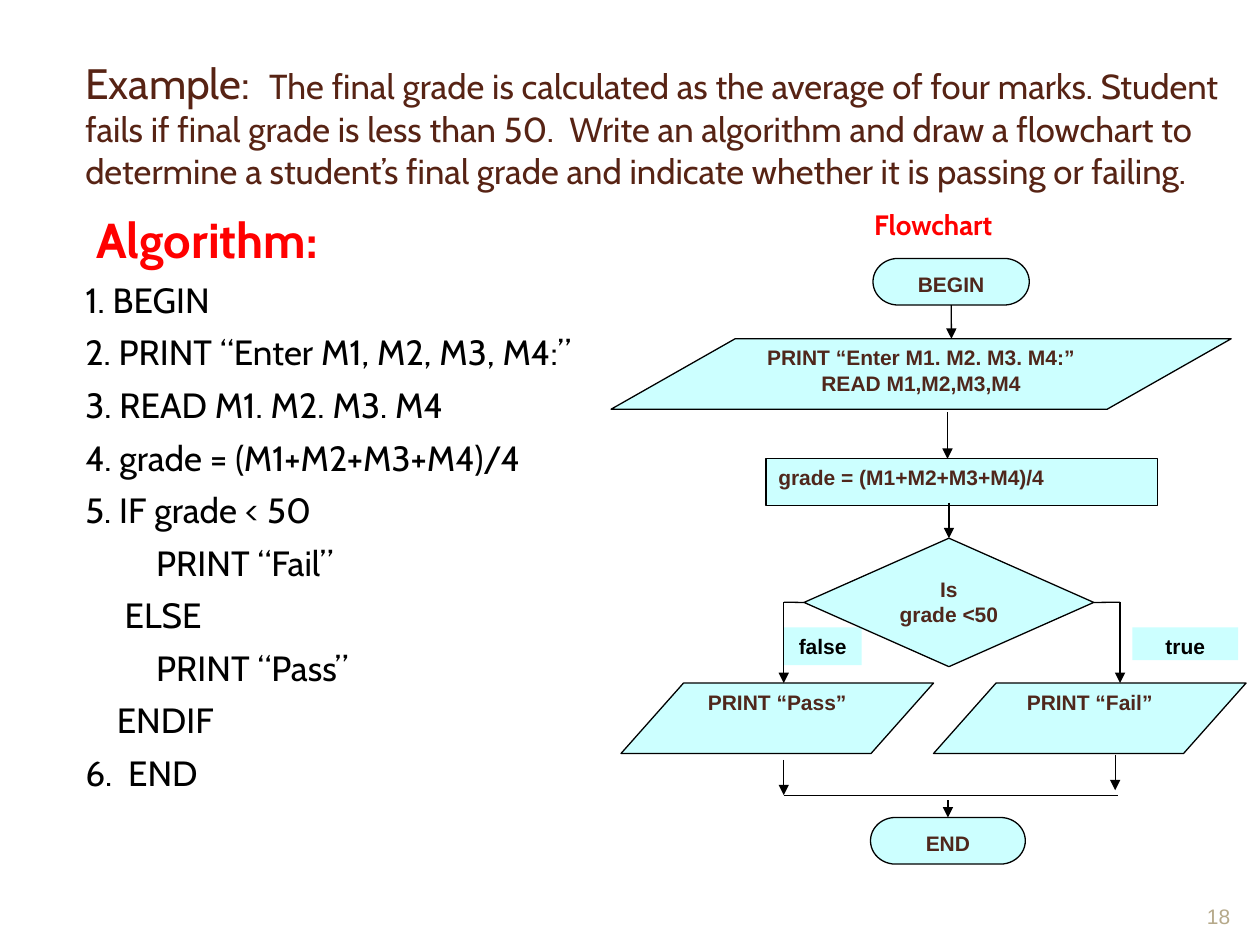
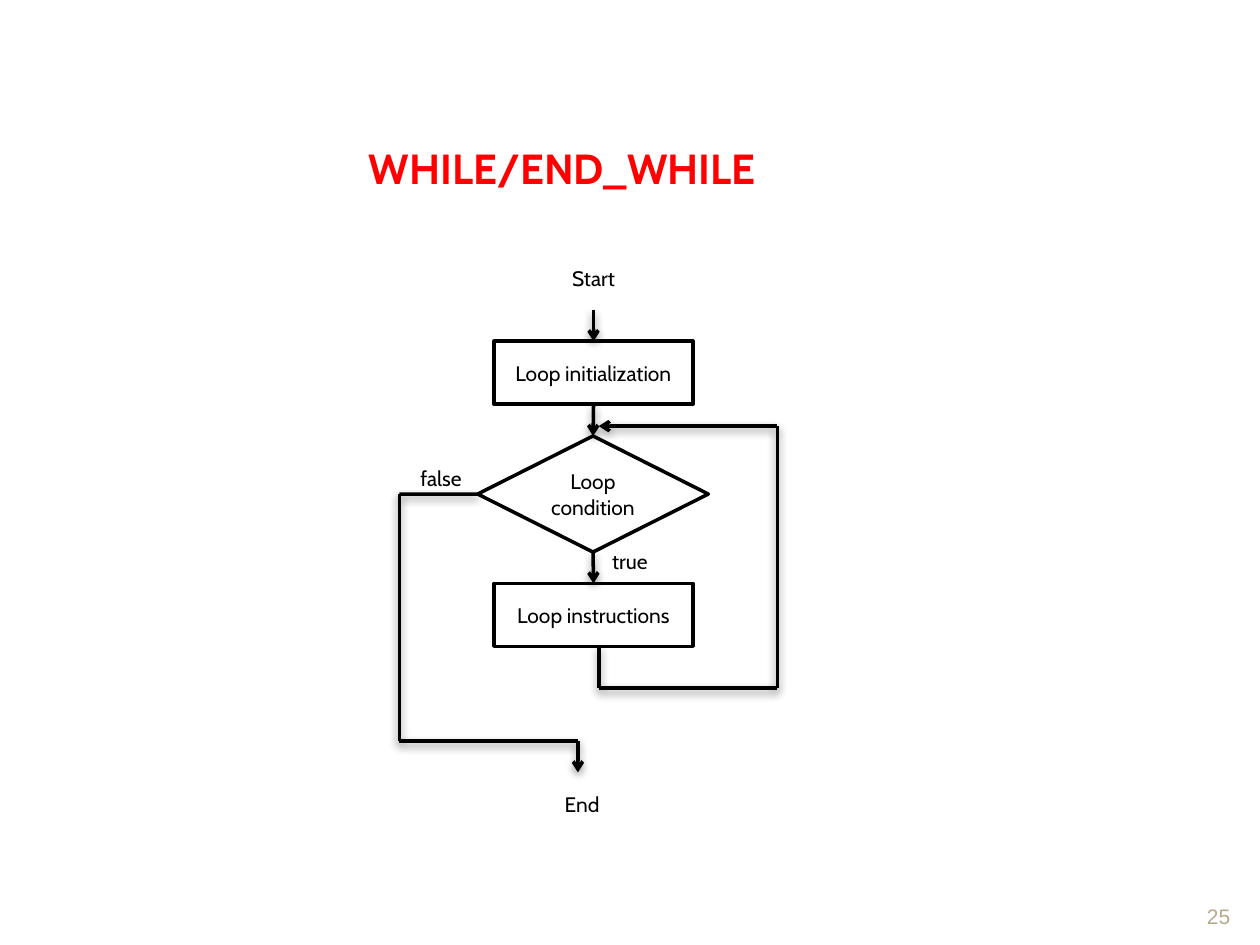
from dataclasses import dataclass
from itertools import pairwise

from lxml.etree import SubElement
from pptx import Presentation
from pptx.dml.color import RGBColor as Color
from pptx.enum.shapes import MSO_CONNECTOR as Connector, MSO_SHAPE as Shape
from pptx.enum.text import MSO_ANCHOR as Anchor, PP_ALIGN as Align
from pptx.oxml.ns import qn
from pptx.util import Cm, Pt


@dataclass(frozen=True)
class Theme:
    black: Color = Color(0x00, 0x00, 0x00)
    white: Color = Color(0xFF, 0xFF, 0xFF)
    red: Color = Color(0xFF, 0x00, 0x00)
    title_brown: Color = Color(0x57, 0x23, 0x14)
    box_brown: Color = Color(0x4F, 0x27, 0x1C)
    cyan: Color = Color(0xCC, 0xFF, 0xFF)
    number_tan: Color = Color(0xB6, 0xA9, 0x8A)
    heading_font: str = "Cabin"
    box_font: str = "Arial"
    example: float = 24.3
    question: float = 19.8
    algorithm: float = 28
    step: float = 20
    flowchart: float = 16
    loop_title: float = 24
    small: float = 12
    thin: float = 0.75
    thick: float = 2


theme = Theme()


def add_box(slide, kind, place, lines, font, size, color, bold=False, align=Align.CENTER,
            anchor=Anchor.MIDDLE, fill=None, outline=None, space=0):
    lengths = [Cm(value) for value in place]
    if kind is None:
        shape = slide.shapes.add_textbox(*lengths)
    else:
        shape = slide.shapes.add_shape(kind, *lengths)
        shape.shadow.inherit = False
    if fill is None:
        shape.fill.background()
    else:
        shape.fill.solid()
        shape.fill.fore_color.rgb = fill
    if outline is None:
        shape.line.fill.background()
    else:
        shape.line.color.rgb = theme.black
        shape.line.width = Pt(outline)
    frame = shape.text_frame
    frame.word_wrap = True
    frame.vertical_anchor = anchor
    for index, line in enumerate(lines):
        paragraph = frame.paragraphs[0] if index == 0 else frame.add_paragraph()
        paragraph.text = line
        paragraph.alignment = align
        paragraph.space_before = Pt(space if index else 0)
        paragraph.font.name = font
        paragraph.font.size = Pt(size)
        paragraph.font.bold = bold
        paragraph.font.color.rgb = color
    return shape


def add_route(slide, points, width, arrow=None, source=None, target=None, shadow=False):
    connectors = []
    for start, end in pairwise(points):
        connector = slide.shapes.add_connector(
            Connector.STRAIGHT, *[Cm(value) for value in (*start, *end)])
        connector.line.color.rgb = theme.black
        connector.line.width = Pt(width)
        effects = SubElement(connector._element.spPr, qn("a:effectLst"))
        if shadow:
            outer = SubElement(effects, qn("a:outerShdw"), blurRad=str(Pt(5)), dist=str(Pt(2)),
                               dir="5400000", rotWithShape="0")
            tint = SubElement(outer, qn("a:srgbClr"), val=str(theme.black))
            SubElement(tint, qn("a:alpha"), val="43000")
        connectors.append(connector)
    if arrow:
        SubElement(connectors[-1].line._get_or_add_ln(), qn("a:tailEnd"), type=arrow)
    if source:
        connectors[0].begin_connect(*source)
    if target:
        connectors[-1].end_connect(*target)


presentation = Presentation()
presentation.slide_width = Cm(25.4)
presentation.slide_height = Cm(19.05)
blank = presentation.slide_layouts[6]
grade_slide, loop_slide = [presentation.slides.add_slide(blank) for _ in range(2)]
for slide, number in ((grade_slide, "18"), (loop_slide, "25")):
    add_box(slide, None, (23.93, 17.53, 1.27, 1.32), [number], theme.box_font, theme.small,
            theme.number_tan, anchor=Anchor.BOTTOM)

title = add_box(grade_slide, None, (1.47, 0.91, 23.34, 3.18), ["Example:  "],
                theme.heading_font, theme.example, theme.title_brown, align=Align.LEFT)
title.text_frame.margin_right = 0
question = title.text_frame.paragraphs[0].add_run()
question.text = (
    "The final grade is calculated as the average of four marks. Student fails if final grade "
    "is less than 50.  Write an algorithm and draw a flowchart to determine a student’s final "
    "grade and indicate whether it is passing or failing.")
question.font.size = Pt(theme.question)

steps = [
    "Algorithm:",
    "1. BEGIN",
    "2. PRINT “Enter M1, M2, M3, M4:”",
    "3. READ M1. M2. M3. M4",
    "4. grade = (M1+M2+M3+M4)/4",
    "5. IF grade < 50",
    "         PRINT “Fail”",
    "     ELSE",
    "         PRINT “Pass”",
    "    ENDIF",
    "6.  END",
]
algorithm = add_box(grade_slide, None, (1.47, 4.09, 10.59, 12.95), steps, theme.heading_font,
                    theme.step, theme.black, align=Align.LEFT, anchor=Anchor.TOP, space=6)
heading = algorithm.text_frame.paragraphs[0]
heading._p.get_or_add_pPr().set("marL", str(Cm(0.23)))
heading.font.size = Pt(theme.algorithm)
heading.font.bold = True
heading.font.color.rgb = theme.red

add_box(grade_slide, None, (16.81, 3.89, 4.01, 1.27), ["Flowchart"], theme.heading_font,
        theme.flowchart, theme.red, bold=True)
for label, place in (("true", (22.83, 12.65, 2.13, 0.66)), ("false", (15.8, 12.65, 1.57, 0.76))):
    add_box(grade_slide, Shape.RECTANGLE, place, [label], theme.box_font, theme.small,
            theme.black, bold=True, anchor=Anchor.TOP, fill=theme.cyan)

grade_boxes = {}
for name, kind, place, lines in (
    ("begin", Shape.FLOWCHART_TERMINATOR, (17.6, 5.21, 3.15, 0.94), ["BEGIN"]),
    ("input", Shape.FLOWCHART_DATA, (12.32, 6.83, 12.5, 1.42),
     ["PRINT “Enter M1. M2. M3. M4:”", "READ M1,M2,M3,M4"]),
    ("average", Shape.FLOWCHART_PROCESS, (15.44, 9.25, 7.9, 0.94), ["grade = (M1+M2+M3+M4)/4"]),
    ("test", Shape.FLOWCHART_DECISION, (16.21, 10.85, 5.84, 2.59), ["Is", "grade <50"]),
    ("pass", Shape.FLOWCHART_DATA, (12.52, 13.77, 6.3, 1.42), ["PRINT “Pass”"]),
    ("fail", Shape.FLOWCHART_DATA, (18.82, 13.77, 6.3, 1.42), ["PRINT “Fail”"]),
    ("end", Shape.FLOWCHART_TERMINATOR, (17.55, 16.48, 3.12, 0.94), ["END"]),
):
    grade_boxes[name] = add_box(
        grade_slide, kind, place, lines, theme.box_font, theme.small, theme.box_brown, bold=True,
        align=Align.LEFT if name == "average" else Align.CENTER, anchor=Anchor.TOP,
        fill=theme.cyan, outline=theme.thin)

test = grade_boxes["test"]
for points, arrow, source, target in (
    ([(19.18, 6.15), (19.18, 6.83)], "triangle", (grade_boxes["begin"], 2), None),
    ([(19.1, 8.31), (19.1, 9.25)], "triangle", None, None),
    ([(19.13, 10.13), (19.13, 10.85)], "triangle", None, (test, 0)),
    ([(16.21, 12.14), (15.8, 12.14), (15.8, 13.77)], "triangle", (test, 1), None),
    ([(22.05, 12.14), (22.58, 12.14), (22.58, 13.77)], "triangle", (test, 3), None),
    ([(15.8, 15.32), (15.8, 16.03)], "triangle", None, None),
    ([(22.48, 15.21), (22.48, 15.93)], "triangle", None, None),
    ([(15.8, 16.03), (22.53, 16.03)], None, None, None),
    ([(19.11, 16.13), (19.11, 16.48)], "triangle", None, (grade_boxes["end"], 0)),
):
    add_route(grade_slide, points, theme.thin, arrow, source, target)

add_box(loop_slide, None, (5.72, 2.11, 11.23, 2.54), ["WHILE/END_WHILE"], theme.heading_font,
        theme.loop_title, theme.red, bold=True)
loop_boxes = {}
for label, kind, place, fill, outline in (
    ("Start", Shape.FLOWCHART_PROCESS, (9.96, 4.98, 4.01, 1.27), None, None),
    ("Loop initialization", Shape.FLOWCHART_PROCESS, (9.96, 6.88, 4.01, 1.27),
     theme.white, theme.thick),
    ("Loop condition", Shape.FLOWCHART_DECISION, (9.63, 8.79, 4.65, 2.34),
     theme.white, theme.thick),
    ("Loop instructions", Shape.FLOWCHART_PROCESS, (9.96, 11.76, 4.01, 1.27),
     theme.white, theme.thick),
    ("End", Shape.FLOWCHART_PROCESS, (9.73, 15.57, 4.01, 1.27), None, None),
    ("true", None, (11.43, 10.9, 2.54, 0.84), None, None),
    ("false", None, (7.62, 9.22, 2.54, 0.84), None, None),
):
    loop_boxes[label] = add_box(loop_slide, kind, place, [label], theme.heading_font, theme.small,
                                theme.black, fill=fill, outline=outline)

chain = ["Start", "Loop initialization", "Loop condition", "Loop instructions"]
for upper, lower in pairwise(chain):
    add_route(loop_slide, [(11.96, 6.25), (11.96, 6.88)], theme.thick, "arrow",
              (loop_boxes[upper], 2), (loop_boxes[lower], 0), shadow=True)
repeat_route = [(12.07, 13.03), (12.07, 13.87), (15.67, 13.87), (15.67, 8.59), (12.07, 8.59)]
exit_route = [(9.63, 9.96), (8.05, 9.96), (8.05, 14.94), (11.65, 14.94), (11.65, 15.57)]
add_route(loop_slide, repeat_route, theme.thick, "arrow", shadow=True)
add_route(loop_slide, exit_route, theme.thick, "arrow", (loop_boxes["Loop condition"], 1),
          shadow=True)

presentation.save("out.pptx")
